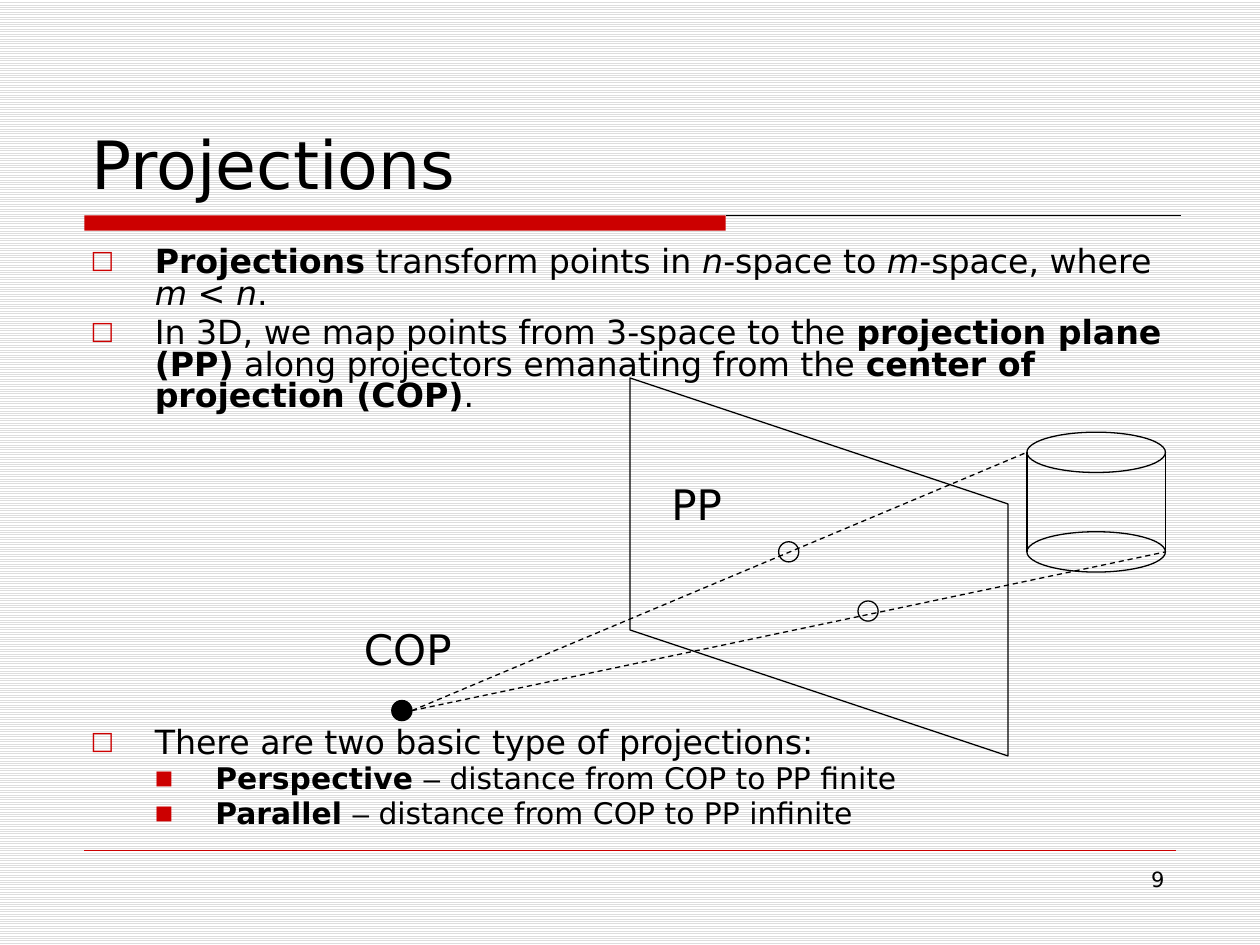
from lxml import etree
from pptx import Presentation
from pptx.dml.color import RGBColor
from pptx.enum.dml import MSO_LINE, MSO_PATTERN
from pptx.enum.shapes import MSO_CONNECTOR, MSO_SHAPE
from pptx.enum.text import MSO_ANCHOR, PP_ALIGN
from pptx.oxml.ns import qn
from pptx.util import Inches, Pt

OVAL, RECT = MSO_SHAPE.OVAL, MSO_SHAPE.RECTANGLE
STRAIGHT, DASH = MSO_CONNECTOR.STRAIGHT, MSO_LINE.DASH
BOTTOM, RIGHT = MSO_ANCHOR.BOTTOM, PP_ALIGN.RIGHT
FONT, BLACK, RED = "DejaVu Sans", "000000", "CC0000"

POINTS = [
    (0, 3.8, [("Projections", "b"), (" transform points in ", ""), ("n", "i"),
              ("-space to ", ""), ("m", "i"), ("-space, where ", ""),
              ("m", "i"), (" < ", ""), ("n", "i"), (".", "")]),
    (0, 3.8, [("In 3D, we map points from 3-space to the ", ""),
              ("projection plane (PP)", "b"),
              (" along projectors emanating from the ", ""),
              ("center of projection (COP)", "b"), (".", "")]),
    (0, 180, [("There are two basic type of projections:", "")]),
    (1, 3.4, [("Perspective ", "b"), ("–", "a"),
              (" distance from COP to PP finite", "")]),
    (1, 3.4, [("Parallel ", "b"), ("–", "a"),
              (" distance from COP to PP infinite", "")]),
]
LEVELS = [
    {"size": 19, "left": 0.51, "hang": 0.51, "mark": "□", "scale": 75},
    {"size": 17, "left": 0.99, "hang": 0.48, "mark": "■", "scale": 65},
]
LABELS = [
    ("Projections", (0.63, 0.33, 8.75, 1.33), 38,
     {"vertical_anchor": BOTTOM, "word_wrap": True}, None),
    ("COP", (2.79, 4.9, 0.9, 0.5), 24, {"word_wrap": False}, None),
    ("PP", (5.23, 3.75, 0.6, 0.5), 24, {"word_wrap": False}, None),
    ("9", (7.17, 6.83, 2.17, 0.52), 12, {"word_wrap": True}, RIGHT),
]
PLANE = [(5.31, 3.12), (5.31, 5.17), (7.91, 6.35), (7.91, 4.38)]
LEFT, WIDE, HIGH = 8.15, 1.1, 0.32
RIMS = (3.59, 4.38)
DOT = 0.16
EYE = (3.19, 5.64)
HITS = [(6.26, 4.38), (6.89, 4.85)]

deck = Presentation()
deck.slide_width, deck.slide_height = Inches(10), Inches(7.5)
slide = deck.slides.add_slide(deck.slide_layouts[6])
shapes = slide.shapes


def color(code):
    return RGBColor.from_string(code)


def paint(shape, fill=None, line=BLACK):
    shape.shadow.inherit = False
    if fill:
        shape.fill.solid()
        shape.fill.fore_color.rgb = color(fill)
    else:
        shape.fill.background()
    if line:
        shape.line.color.rgb = color(line)
        shape.line.width = Pt(0.75)
    else:
        shape.line.fill.background()


def oval(x, y, w, h, fill=None):
    box = [Inches(v) for v in (x - w / 2, y - h / 2, w, h)]
    paint(shapes.add_shape(OVAL, *box), fill)


def link(start, end, hue=BLACK, width=0.75, dash=None):
    wire = shapes.add_connector(STRAIGHT, *[Inches(v) for v in start + end])
    wire.line.color.rgb = color(hue)
    wire.line.width = Pt(width)
    if dash:
        wire.line.dash_style = dash
    etree.SubElement(wire._element.spPr, qn("a:effectLst"))


def frame(box, **props):
    text = shapes.add_textbox(*[Inches(v) for v in box]).text_frame
    for name, value in props.items():
        setattr(text, name, value)
    return text


def write(para, words, size, style=""):
    run = para.add_run()
    run.text = words
    look = {"name": "Arial" if style == "a" else FONT, "size": Pt(size),
            "bold": style == "b", "italic": style == "i"}
    for name, value in look.items():
        setattr(run.font, name, value)
    run.font.color.rgb = color(BLACK)


def bullet(para, rule):
    props = para._p.get_or_add_pPr()
    props.set("marL", str(Inches(rule["left"])))
    props.set("indent", str(-Inches(rule["hang"])))
    tint = etree.SubElement(props, qn("a:buClr"))
    etree.SubElement(tint, qn("a:srgbClr"), val=RED)
    etree.SubElement(props, qn("a:buSzPct"), val=str(rule["scale"] * 1000))
    etree.SubElement(props, qn("a:buFont"), typeface=FONT)
    etree.SubElement(props, qn("a:buChar"), char=rule["mark"])


back = slide.background.fill
back.patterned()
back.pattern = MSO_PATTERN.LIGHT_HORIZONTAL
back.fore_color.rgb, back.back_color.rgb = color("DDDDDD"), color("FFFFFF")

bar = [Inches(v) for v in (0.67, 1.71, 5.09, 0.12)]
paint(shapes.add_shape(RECT, *bar), RED, None)
link((5.76, 1.71), (9.37, 1.71))
link((0.67, 6.75), (9.33, 6.75), RED, 0.25)

body = frame((0.62, 1.92, 8.75, 4.98), word_wrap=True)
for n, (level, gap, runs) in enumerate(POINTS):
    para = body.add_paragraph() if n else body.paragraphs[0]
    para.level, para.line_spacing, para.space_before = level, 0.8, Pt(gap)
    bullet(para, LEVELS[level])
    for words, style in runs:
        write(para, words, LEVELS[level]["size"], style)

path = shapes.build_freeform(*PLANE[0], scale=Inches(1))
path.add_line_segments(PLANE[1:], close=True)
paint(path.convert_to_shape())

for y in RIMS:
    oval(LEFT + WIDE / 2, y, WIDE, HIGH)
for x in (LEFT, LEFT + WIDE):
    link((x, RIMS[0]), (x, RIMS[1]))
oval(*EYE, DOT, DOT, BLACK)
for end in ((LEFT, RIMS[0]), (LEFT + WIDE, RIMS[1])):
    link((EYE[0] + DOT / 2, EYE[1]), end, dash=DASH)
for spot in HITS:
    oval(*spot, DOT, DOT)

for words, box, size, props, align in LABELS:
    para = frame(box, **props).paragraphs[0]
    para.alignment = align
    write(para, words, size)

deck.save("out.pptx")
